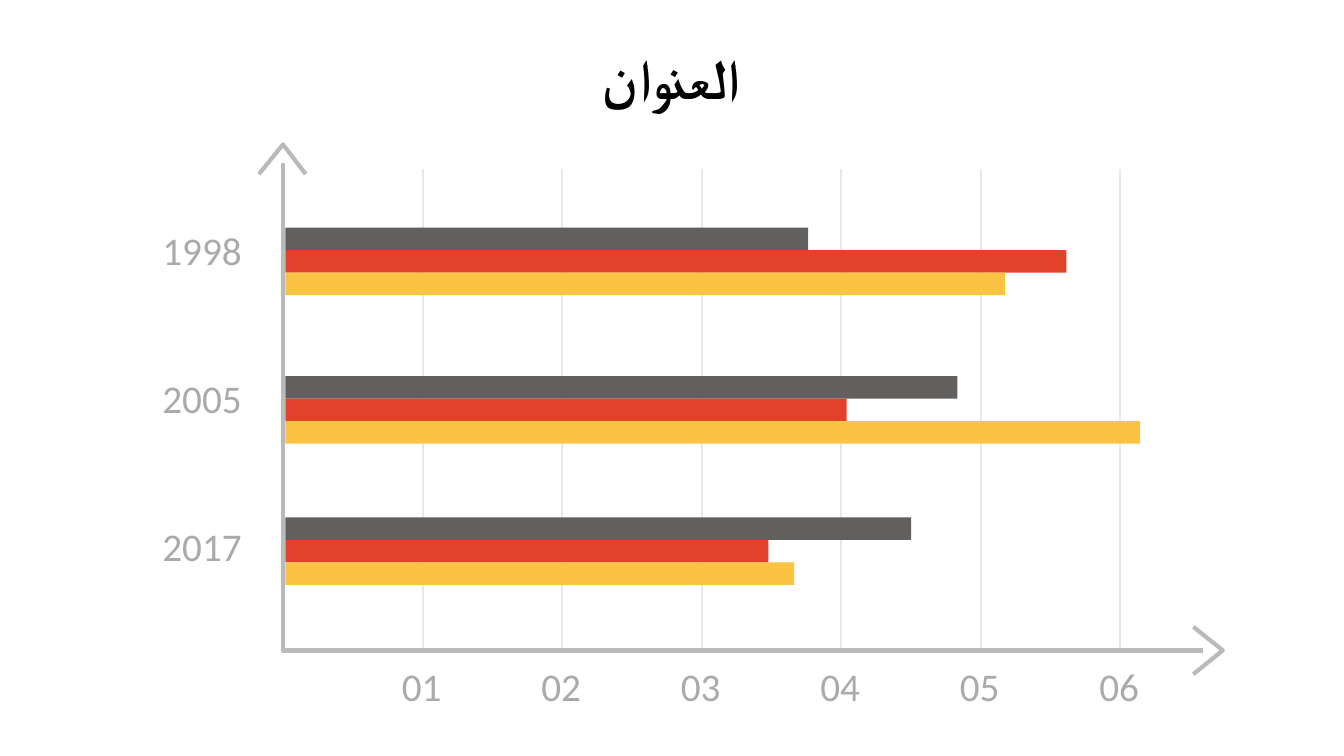
from lxml import etree
from pptx import Presentation
from pptx.dml.color import RGBColor
from pptx.enum.shapes import MSO_CONNECTOR, MSO_SHAPE
from pptx.enum.text import PP_ALIGN
from pptx.oxml.ns import qn
from pptx.util import Pt

STRAIGHT = MSO_CONNECTOR.STRAIGHT
RECTANGLE = MSO_SHAPE.RECTANGLE
LEFT, CENTER = PP_ALIGN.LEFT, PP_ALIGN.CENTER

# Content: bar lengths are in points, in the order of SERIES
TITLE = "العنوان"
TICKS = ["01", "02", "03", "04", "05", "06"]
SERIES = ["gray", "red", "yellow"]
YEARS = [
    {"year": "1998", "bars_top": 162.6, "lengths": [373.5, 558, 514]},
    {"year": "2005", "bars_top": 268.6, "lengths": [480, 401, 610.4]},
    {"year": "2017", "bars_top": 369.6, "lengths": [447, 345, 363.5]},
]
COLORS = {
    "title": "000000", "label": "A9ABAA", "grid": "E8E8E8", "axis": "BABABA",
    "gray": "61605E", "red": "E2412A", "yellow": "FAC344",
}

# Layout, in points
AXIS_X, AXIS_Y = 202.2, 464.6
GRID_TOP, GRID_BOTTOM, GRID_STEP = 121, 466.6, 99.65
BAR_LEFT, BAR_HEIGHT = 203.8, 16.1
YEAR_TOP, YEAR_STEP = 161.3, 105.8
AXIS_LINES = [
    [(AXIS_X, 116.6), (AXIS_X, AXIS_Y), (859.6, AXIS_Y)],
    [(185, 124.4), (AXIS_X, 103.2), (218.4, 124.4)],
    [(852.4, 447.8), (873.4, AXIS_Y), (852.4, 481.6)],
]

prs = Presentation()
prs.slide_width, prs.slide_height = Pt(960), Pt(540)
slide = prs.slides.add_slide(prs.slide_layouts[6])


def rgb(name):
    return RGBColor.from_string(COLORS[name])


def add_text(text, left, top, width, height, size=28, font="Calibri",
             color="label", bold=False, align=LEFT):
    box = slide.shapes.add_textbox(Pt(left), Pt(top), Pt(width), Pt(height))
    frame = box.text_frame
    frame.word_wrap = True
    frame.margin_left = frame.margin_right = 0
    frame.margin_top = frame.margin_bottom = 0
    paragraph = frame.paragraphs[0]
    paragraph.alignment = align
    run = paragraph.add_run()
    run.text = text
    run.font.size, run.font.name, run.font.bold = Pt(size), font, bold
    run.font.color.rgb = rgb(color)


def add_gridline(shapes, x):
    line = shapes.add_connector(STRAIGHT, Pt(x), Pt(GRID_BOTTOM), Pt(x), Pt(GRID_TOP))
    line.line.color.rgb = rgb("grid")
    line.line.width = Pt(1.37)
    etree.SubElement(line._element.spPr, qn("a:effectLst"))


def add_axis_line(shapes, points):
    start, *rest = [(Pt(x), Pt(y)) for x, y in points]
    builder = shapes.build_freeform(*start)
    builder.add_line_segments(rest, close=False)
    outline = builder.convert_to_shape()
    outline.shadow.inherit = False
    outline.fill.background()
    outline.line.color.rgb = rgb("axis")
    outline.line.width = Pt(3)


def add_bar(shapes, top, length, color):
    bar = shapes.add_shape(RECTANGLE, Pt(BAR_LEFT), Pt(top), Pt(length), Pt(BAR_HEIGHT))
    bar.shadow.inherit = False
    bar.fill.solid()
    bar.fill.fore_color.rgb = rgb(color)
    bar.line.fill.background()


# Grid and axes
axes = slide.shapes.add_group_shape().shapes
grid_xs = [AXIS_X + GRID_STEP * i for i in range(1, len(TICKS) + 1)]
for x in grid_xs:
    add_gridline(axes, x)
for points in AXIS_LINES:
    add_axis_line(axes, points)

# Axis labels
for tick, x in zip(TICKS, grid_xs):
    add_text(tick, x - 14.8, 473, 49, 46)
for row, entry in enumerate(YEARS):
    add_text(entry["year"], 116, YEAR_TOP + YEAR_STEP * row, 80.6, 46)

# Bars, one group per year
for entry in YEARS:
    bars = slide.shapes.add_group_shape().shapes
    for i, (color, length) in enumerate(zip(SERIES, entry["lengths"])):
        add_bar(bars, entry["bars_top"] + BAR_HEIGHT * i, length, color)

# Title
add_text(TITLE, 315.4, 31, 329, 47.5, size=40, font="Montserrat",
         color="title", bold=True, align=CENTER)

prs.save("out.pptx")
